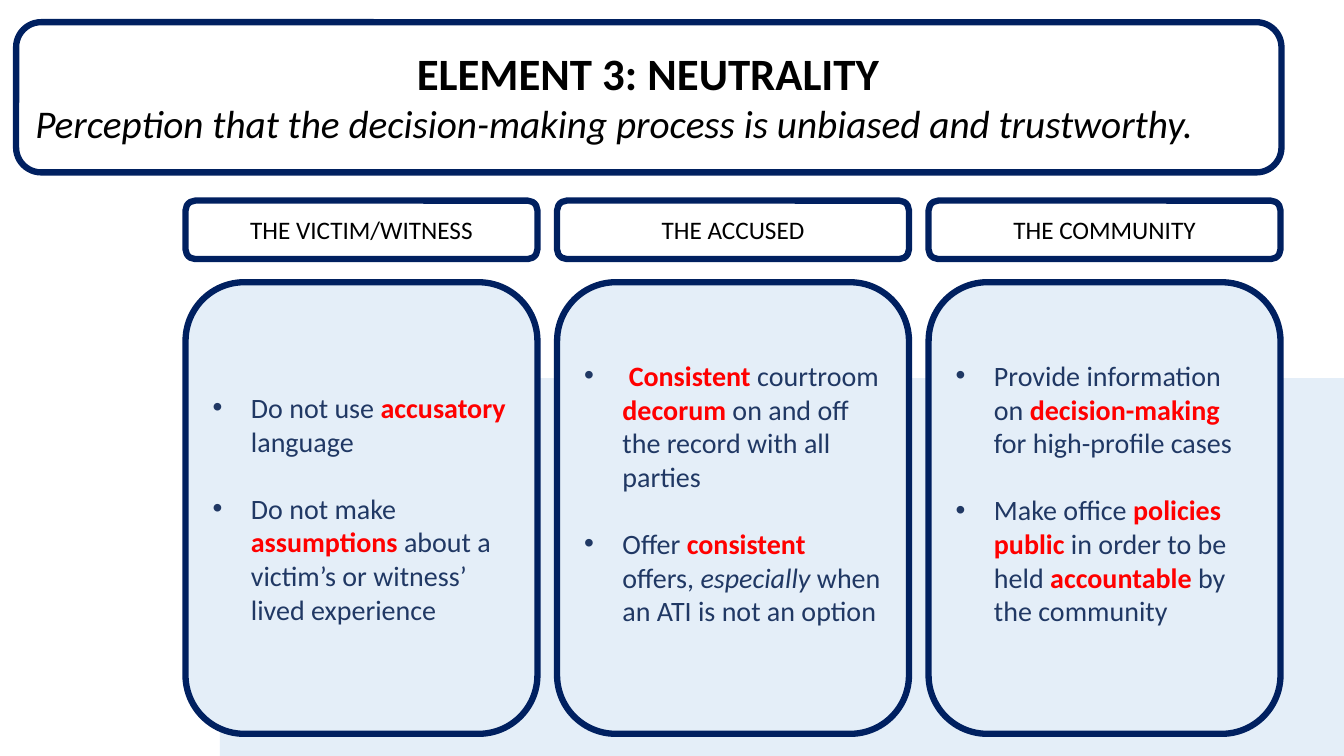
from pptx import Presentation
from pptx.dml.color import RGBColor
from pptx.enum.shapes import MSO_SHAPE
from pptx.enum.text import MSO_ANCHOR, MSO_AUTO_SIZE, PP_ALIGN
from pptx.util import Inches, Pt
from lxml.etree import SubElement
from pptx.oxml.ns import qn

FONT = "Calibri"
COLORS = {"panel": "E4EEF8", "border": "002060", "body": "203864",
          "key": "FF0000", "heading": "000000"}

HEADING = "ELEMENT 3: NEUTRALITY"
DEFINITION = "Perception that the decision-making process is unbiased and trustworthy."

# Each audience: label, bullets made of (text, style) pieces, space kept below the list
AUDIENCES = [
    ("THE VICTIM/WITNESS", [
        [("Do not use ", "body"), ("accusatory", "key"), (" language", "body")],
        [("Do not make ", "body"), ("assumptions", "key"),
         (" about a victim’s or witness’ lived experience", "body")],
    ], 0.05),
    ("THE ACCUSED", [
        [(" ", "body"), ("Consistent", "key"), (" courtroom ", "body"), ("decorum", "key"),
         (" on and off the record with all parties", "body")],
        [("Offer ", "body"), ("consistent", "key"), (" offers, ", "body"),
         ("especially", "italic"), (" when an ATI is not an option", "body")],
    ], 0.35),
    ("THE COMMUNITY", [
        [("Provide information on ", "body"), ("decision-making", "key"),
         (" for high-profile cases", "body")],
        [("Make office ", "body"), ("policies public", "key"),
         (" in order to be held ", "body"), ("accountable", "key"),
         (" by the community", "body")],
    ], 0.35),
]

# Column grid
FIRST_LEFT, COLUMN_STEP, COLUMN_WIDTH = 1.84, 3.685, 3.49
LABEL_TOP, LABEL_HEIGHT = 1.99, 0.58
CARD_TOP, CARD_HEIGHT = 2.8, 4.48

prs = Presentation()
prs.slide_width, prs.slide_height = Inches(13.33), Inches(7.5)
slide = prs.slides.add_slide(prs.slide_layouts[5])


def color(name):
    return RGBColor.from_string(COLORS[name])


def add_panel(preset, left, top, width, height, fill=None, border=None):
    panel = slide.shapes.add_shape(
        preset, Inches(left), Inches(top), Inches(width), Inches(height))
    panel.shadow.inherit = False
    if fill:
        panel.fill.solid()
        panel.fill.fore_color.rgb = color(fill)
    else:
        panel.fill.background()
    if border:
        panel.line.color.rgb = color(border)
        panel.line.width = Pt(4.5)
    else:
        panel.line.fill.background()
    panel.text_frame.word_wrap = True
    panel.text_frame.vertical_anchor = MSO_ANCHOR.MIDDLE
    return panel


def add_run(paragraph, text, size, color_name, bold=False, italic=False):
    run = paragraph.add_run()
    run.text = text
    run.font.name, run.font.size = FONT, Pt(size)
    run.font.bold, run.font.italic = bold, italic
    run.font.color.rgb = color(color_name)


def add_bullet(paragraph):
    properties = paragraph._p.get_or_add_pPr()
    properties.set("marL", str(Inches(0.38)))
    properties.set("indent", str(-Inches(0.38)))
    SubElement(properties, qn("a:buFont"), typeface="Arial")
    SubElement(properties, qn("a:buChar"), char="•")


# Background block and heading frame
add_panel(MSO_SHAPE.RECTANGLE, 2.18, 3.75, 11.15, 3.75, fill="panel")
add_panel(MSO_SHAPE.ROUNDED_RECTANGLE, 0.16, 0.22, 12.55, 1.49, border="border")

# Title with its definition
title = slide.shapes.title
title.left, title.top = Inches(0.25), Inches(0.4)
title.width, title.height = Inches(12.36), Inches(1.11)
heading_frame = title.text_frame
heading_frame.word_wrap = True
heading_frame.auto_size = MSO_AUTO_SIZE.NONE
heading_frame.vertical_anchor = MSO_ANCHOR.MIDDLE
heading = heading_frame.paragraphs[0]
heading.alignment = PP_ALIGN.CENTER
add_run(heading, HEADING, 32, "heading", bold=True)
definition = heading_frame.add_paragraph()
definition.alignment = PP_ALIGN.LEFT
add_run(definition, DEFINITION, 28, "heading", italic=True)

# One label and one card per audience
for column, (audience, bullets, space_below) in enumerate(AUDIENCES):
    left = FIRST_LEFT + column * COLUMN_STEP
    label = add_panel(MSO_SHAPE.ROUNDED_RECTANGLE, left, LABEL_TOP,
                      COLUMN_WIDTH, LABEL_HEIGHT, border="border")
    label_line = label.text_frame.paragraphs[0]
    label_line.alignment = PP_ALIGN.CENTER
    add_run(label_line, audience, 18, "heading")

    card = add_panel(MSO_SHAPE.ROUNDED_RECTANGLE, left, CARD_TOP,
                     COLUMN_WIDTH, CARD_HEIGHT, fill="panel", border="border")
    card.text_frame.margin_bottom = Inches(space_below)
    for position, pieces in enumerate(bullets):
        bullet = card.text_frame.add_paragraph() if position else card.text_frame.paragraphs[0]
        add_bullet(bullet)
        bullet.alignment = PP_ALIGN.LEFT
        if position:
            bullet.space_before = Pt(24)
        for text, style in pieces:
            add_run(bullet, text, 20, "key" if style == "key" else "body",
                    bold=style == "key", italic=style == "italic")

prs.save("out.pptx")
